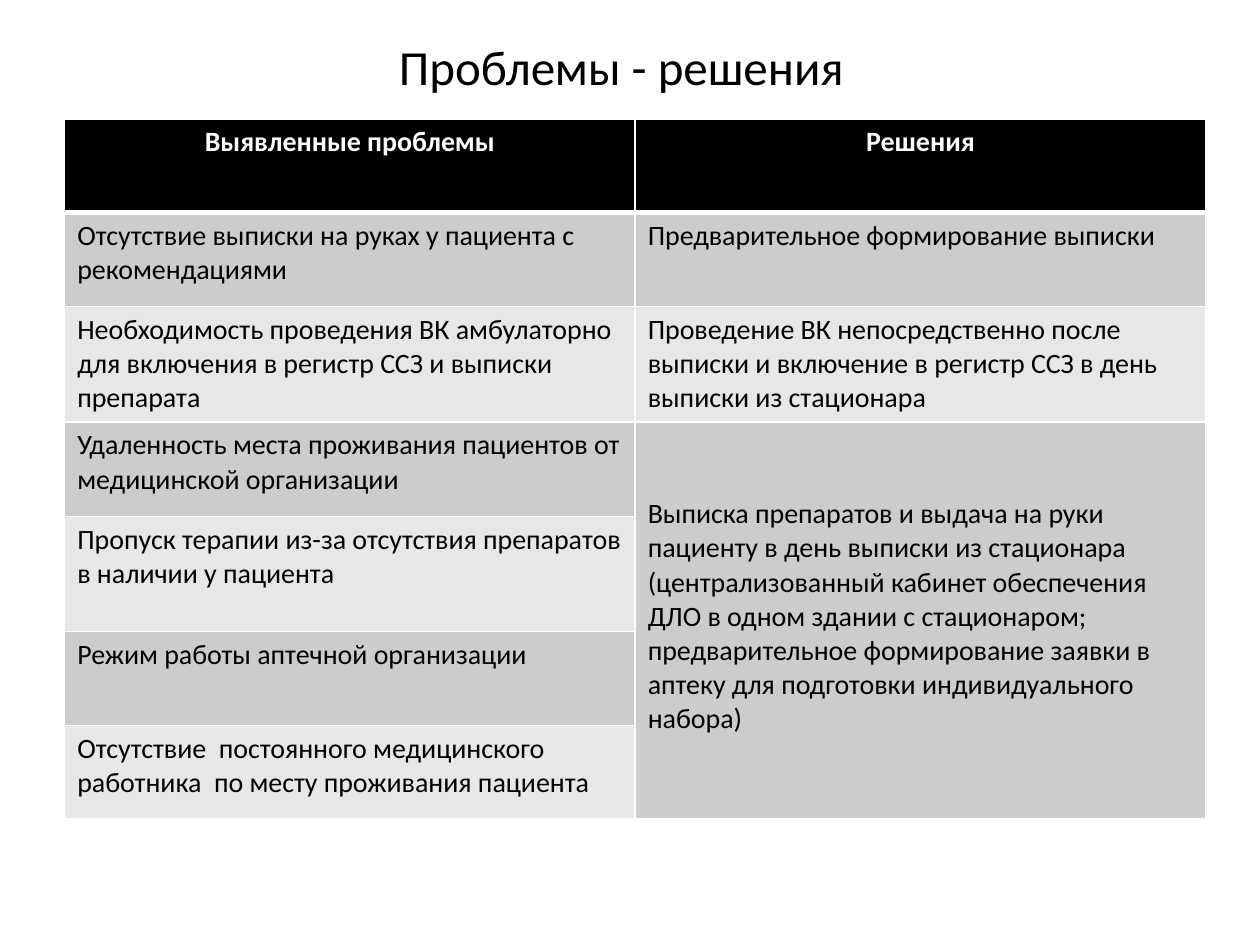
from lxml.etree import SubElement
from pptx import Presentation
from pptx.dml.color import RGBColor
from pptx.enum.text import MSO_ANCHOR, PP_ALIGN
from pptx.oxml.ns import qn
from pptx.util import Pt

BLACK, WHITE = "000000", "FFFFFF"
BANDS = ("CCCCCC", "E7E7E7")
HEADER = ("Выявленные проблемы", "Решения")
PROBLEMS = (
    "Отсутствие выписки на руках у пациента с рекомендациями",
    "Необходимость проведения ВК амбулаторно для включения в регистр ССЗ "
    "и выписки препарата",
    "Удаленность места проживания пациентов от медицинской организации",
    "Пропуск терапии из-за отсутствия препаратов в наличии у пациента",
    "Режим работы аптечной организации",
    "Отсутствие  постоянного медицинского работника  по месту проживания пациента",
)
SOLUTIONS = (
    "Предварительное формирование выписки",
    "Проведение ВК непосредственно после выписки и включение в регистр ССЗ "
    "в день выписки из стационара",
    "Выписка препаратов и выдача на руки пациенту в день выписки из стационара "
    "(централизованный кабинет обеспечения ДЛО в одном здании с стационаром; "
    "предварительное формирование заявки в аптеку для подготовки "
    "индивидуального набора)",
)
ROW_HEIGHTS = (53.6, 53.6, 66, 53.9, 65.9, 53.6, 53.6)


def rgb(value):
    return RGBColor.from_string(value)


def write(tf, text, size, color=BLACK, bold=False, align=PP_ALIGN.LEFT):
    p = tf.paragraphs[0]
    p.alignment = align
    r = p.add_run()
    r.text = text
    r.font.color.rgb = rgb(color)
    for name, value in dict(name="Calibri", size=Pt(size), bold=bold).items():
        setattr(r.font, name, value)


def set_borders(cell, top=1, bottom=1):
    tcPr = cell._tc.get_or_add_tcPr()
    for side, width in dict(L=1, R=1, T=top, B=bottom).items():
        ln = SubElement(tcPr, qn(f"a:ln{side}"), w=str(Pt(width)))
        SubElement(SubElement(ln, qn("a:solidFill")), qn("a:srgbClr"), val=WHITE)


def add_title(s, x, y, w, h):
    sp = s.shapes.title
    box = dict(left=Pt(x), top=Pt(y), width=Pt(w), height=Pt(h))
    for name, value in box.items():
        setattr(sp, name, value)
    sp.text_frame.vertical_anchor = MSO_ANCHOR.MIDDLE
    write(sp.text_frame, "Проблемы - решения", 28, align=PP_ALIGN.CENTER)


def add_problem_table(s, x, y, w):
    rows = len(ROW_HEIGHTS)
    table = s.shapes.add_table(rows, 2, Pt(x), Pt(y), Pt(w),
                               Pt(sum(ROW_HEIGHTS))).table
    for row, height in zip(table.rows, ROW_HEIGHTS):
        row.height = Pt(height)
    for col in table.columns:
        col.width = Pt(w / 2)

    # Banded fills and white rules, heavier under the header
    for i in range(rows):
        for j in range(2):
            cell = table.cell(i, j)
            set_borders(cell, top=3 if i == 1 else 1, bottom=3 if i == 0 else 1)
            cell.fill.solid()
            cell.fill.fore_color.rgb = rgb(BLACK if i == 0 else BANDS[(i - 1) % 2])

    # The last solution covers all remaining problems
    shared = table.cell(len(SOLUTIONS), 1)
    shared.merge(table.cell(rows - 1, 1))
    shared.vertical_anchor = MSO_ANCHOR.MIDDLE
    shared.margin_bottom = Pt(8)

    # Wording
    for j, (head, texts) in enumerate(zip(HEADER, (PROBLEMS, SOLUTIONS))):
        write(table.cell(0, j).text_frame, head, 16, WHITE, True, PP_ALIGN.CENTER)
        for i, text in enumerate(texts, 1):
            write(table.cell(i, j).text_frame, text, 16)


def main():
    prs = Presentation()
    prs.slide_width, prs.slide_height = Pt(720), Pt(540)
    s = prs.slides.add_slide(prs.slide_layouts[5])
    add_title(s, 31, 15.4, 648, 44)
    add_problem_table(s, 37, 68, 652)
    prs.save("out.pptx")


if __name__ == "__main__":
    main()
